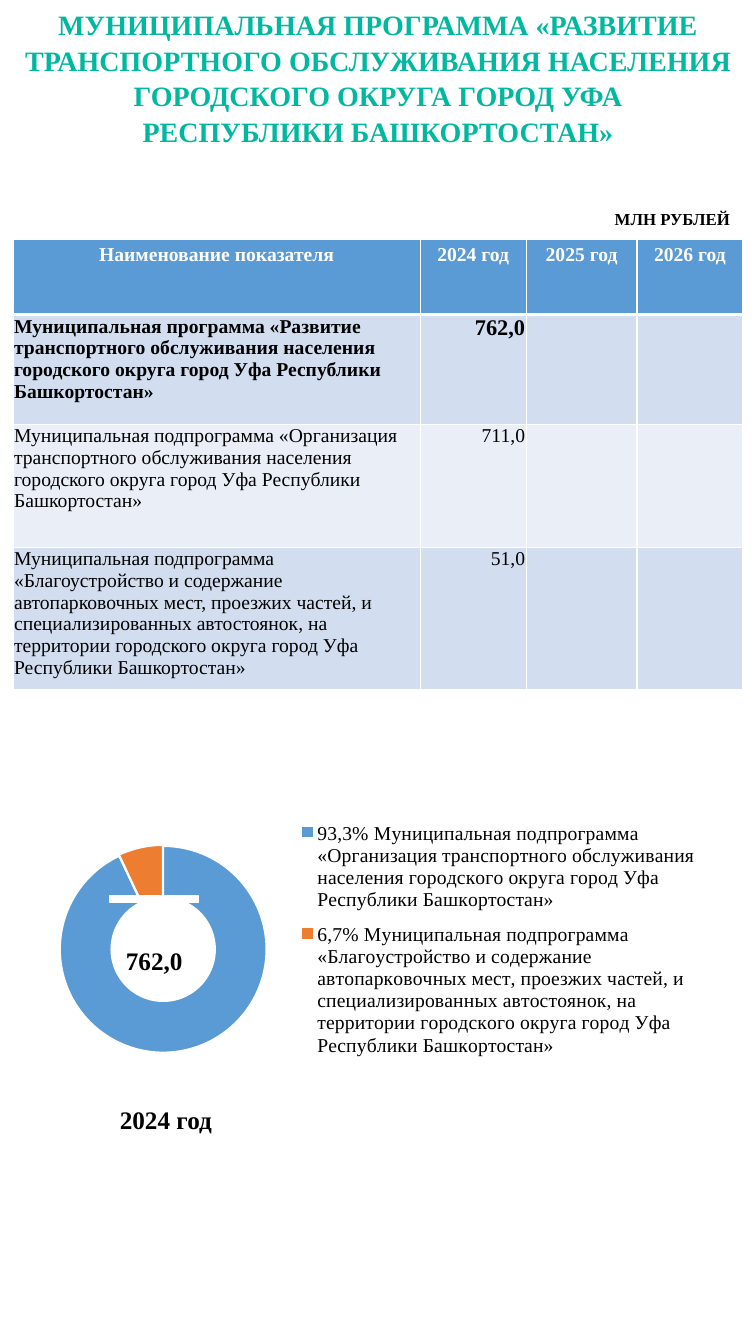
import pptx
import pptx.chart.data
import pptx.dml.color
import pptx.enum.chart
import pptx.enum.shapes
import pptx.enum.text
import pptx.oxml
import pptx.oxml.ns
import pptx.util
from pptx.util import Inches

RGBColor = pptx.dml.color.RGBColor
Align = pptx.enum.text.PP_ALIGN
Anchor = pptx.enum.text.MSO_ANCHOR

TEAL = RGBColor(0x00, 0xB8, 0xA0)
BLACK = RGBColor(0, 0, 0)
WHITE = RGBColor(0xFF, 0xFF, 0xFF)
BLUE = RGBColor(0x5B, 0x9B, 0xD5)
ORANGE = RGBColor(0xED, 0x7D, 0x31)
BAND = RGBColor(0xD2, 0xDE, 0xEF)
PALE = RGBColor(0xEA, 0xEF, 0xF7)
SERIF = "Times New Roman"

CITY = "городского округа город Уфа Республики Башкортостан»"
MOVE = f"транспортного обслуживания населения {CITY}"
PLAN = f"Муниципальная программа «Развитие {MOVE}"
RIDES = f"Муниципальная подпрограмма «Организация {MOVE}"
PARKS = (
    "Муниципальная подпрограмма «Благоустройство и содержание "
    "автопарковочных мест, проезжих частей, и специализированных "
    f"автостоянок, на территории {CITY}"
)
TITLE = (
    "МУНИЦИПАЛЬНАЯ ПРОГРАММА «РАЗВИТИЕ ТРАНСПОРТНОГО ОБСЛУЖИВАНИЯ "
    "НАСЕЛЕНИЯ ГОРОДСКОГО ОКРУГА ГОРОД УФА\vРЕСПУБЛИКИ БАШКОРТОСТАН»"
)
HEADS = ["Наименование показателя", "2024 год", "2025 год", "2026 год"]
ROWS = [HEADS, [PLAN, "762,0", "", ""], [RIDES, "711,0", "", ""], [PARKS, "51,0", "", ""]]
WIDTHS = [4.04, 1.05, 1.1, 1.05]
HEIGHTS = [0.75, 1.09, 1.22, 1.41]
FILLS = [BLUE, BAND, PALE, BAND]


def apply(item, values):
    """Set every attribute named in the values."""
    for name, value in values.items():
        setattr(item, name, value)


def style(font, size, color=BLACK, bold=False, name=SERIF):
    """Format a font."""
    apply(font, {"size": pptx.util.Pt(size), "bold": bold, "name": name})
    font.color.rgb = color


def write(frame, text, size, color=BLACK, bold=True, align=Align.LEFT):
    """Fill a text frame with one paragraph."""
    para = frame.paragraphs[0]
    para.text = text
    para.alignment = align
    for run in para.runs:
        style(run.font, size, color, bold)
    return para


def add_text(slide, box, text, size, wrap=True, anchor=Anchor.TOP, **look):
    """Add a text box."""
    frame = slide.shapes.add_textbox(*map(Inches, box)).text_frame
    apply(frame, {"word_wrap": wrap, "vertical_anchor": anchor})
    return write(frame, text, size, **look)


def add_edges(cell, base):
    """Draw white borders, with the given width at the base."""
    props = cell._tc.get_or_add_tcPr()
    for place, (side, width) in enumerate(zip("LRTB", (1, 1, 1, base))):
        line = pptx.oxml.parse_xml(
            f'<a:ln{side} {pptx.oxml.ns.nsdecls("a")} w="{pptx.util.Pt(width)}">'
            f'<a:solidFill><a:srgbClr val="{WHITE}"/></a:solidFill></a:ln{side}>'
        )
        props.insert(place, line)


def fill_cell(cell, text, row, col):
    """Format one table cell by its row and column."""
    cell.fill.solid()
    cell.fill.fore_color.rgb = FILLS[row]
    add_edges(cell, 1 if row else 3)
    if row:
        thin = Inches(0.01)
        apply(cell, {"margin_left": thin, "margin_right": thin,
                     "margin_top": thin, "margin_bottom": 0})
    if text:
        align = (Align.RIGHT if col else Align.LEFT) if row else Align.CENTER
        size = 16 if (row, col) == (1, 1) else 14
        write(cell.text_frame, text, size, BLACK if row else WHITE, row < 2, align)


def add_costs(slide):
    """Add the table of costs by year."""
    box = (0.13, 2.37, sum(WIDTHS), sum(HEIGHTS))
    table = slide.shapes.add_table(len(ROWS), len(HEADS), *map(Inches, box)).table
    for column, width in zip(table.columns, WIDTHS):
        column.width = Inches(width)
    for row, texts in enumerate(ROWS):
        table.rows[row].height = Inches(HEIGHTS[row])
        for col, text in enumerate(texts):
            fill_cell(table.cell(row, col), text, row, col)


def make_layout(x, y, w, h, inner=""):
    """Build a manual chart layout."""
    parts = {"xMode": "edge", "yMode": "edge", "x": x, "y": y, "w": w, "h": h}
    body = "".join(f'<c:{tag} val="{value}"/>' for tag, value in parts.items())
    return pptx.oxml.parse_xml(
        f'<c:layout {pptx.oxml.ns.nsdecls("c")}><c:manualLayout>{inner}{body}'
        "</c:manualLayout></c:layout>"
    )


def add_ring(slide):
    """Add the doughnut chart of shares."""
    data = pptx.chart.data.CategoryChartData()
    data.categories = [f"93,3% {RIDES}", f"6,7% {PARKS}"]
    data.add_series("Series 1", (93, 7))
    box = map(Inches, (0.24, 7.08, 7.07, 4.97))
    kind = pptx.enum.chart.XL_CHART_TYPE.DOUGHNUT
    chart = slide.shapes.add_chart(kind, *box, data).chart
    apply(chart, {"has_title": False, "has_legend": True})
    style(chart.font, 10, name="Calibri")
    legend = chart.legend
    apply(legend, {"position": pptx.enum.chart.XL_LEGEND_POSITION.RIGHT,
                   "include_in_layout": False})
    style(legend.font, 14)
    space = chart._chartSpace
    for old in space.xpath(".//c:plotArea/c:layout | .//c:legend/c:layout"):
        old.getparent().remove(old)
    inner = '<c:layoutTarget val="inner"/>'
    area = space.xpath(".//c:plotArea")[0]
    area.insert(0, make_layout(0.05, 0.22, 0.29, 0.5, inner))
    space.xpath(".//c:legendPos")[0].addnext(make_layout(0.37, 0.19, 0.59, 0.52))
    space.xpath(".//c:holeSize")[0].set("val", "75")
    plot = chart.plots[0]
    plot.vary_by_categories = True
    for index, color in enumerate((BLUE, ORANGE)):
        look = plot.series[0].points[index].format
        look.fill.solid()
        look.fill.fore_color.rgb = color
        look.line.color.rgb = WHITE
        look.line.width = pptx.util.Pt(1.5)
    burst = pptx.oxml.parse_xml(
        f'<c:explosion {pptx.oxml.ns.nsdecls("c")} val="2"/>'
    )
    space.xpath(".//c:dPt[2]/c:spPr")[0].addprevious(burst)


def add_bar(slide):
    """Add the white bar over the ring."""
    kind = pptx.enum.shapes.MSO_SHAPE.RECTANGLE
    bar = slide.shapes.add_shape(kind, *map(Inches, (1.09, 8.88, 0.88, 0.07)))
    bar.shadow.inherit = False
    bar.fill.solid()
    bar.fill.fore_color.rgb = WHITE
    bar.line.color.rgb = WHITE
    bar.line.width = pptx.util.Pt(1)


def main():
    """Build and save the slide."""
    deck = pptx.Presentation()
    apply(deck, {"slide_width": Inches(7.5), "slide_height": Inches(13.33)})
    slide = deck.slides.add_slide(deck.slide_layouts[6])
    title = add_text(slide, (0, -0.01, 7.5, 1.54), TITLE, 20, anchor=Anchor.MIDDLE,
                     color=TEAL, align=Align.CENTER)
    apply(title, {"line_spacing": 1.07, "space_after": pptx.util.Pt(8)})
    add_ring(slide)
    add_bar(slide)
    add_text(slide, (1.03, 9.33, 1, 0.4), "762,0", 18, anchor=Anchor.MIDDLE,
             align=Align.CENTER)
    add_costs(slide)
    add_text(slide, (1.09, 10.9, 1.15, 0.42), "2024 год", 18, wrap=False)
    add_text(slide, (6, 2.02, 1.5, 0.3), "МЛН РУБЛЕЙ", 12)
    deck.save("out.pptx")


if __name__ == "__main__":
    main()
